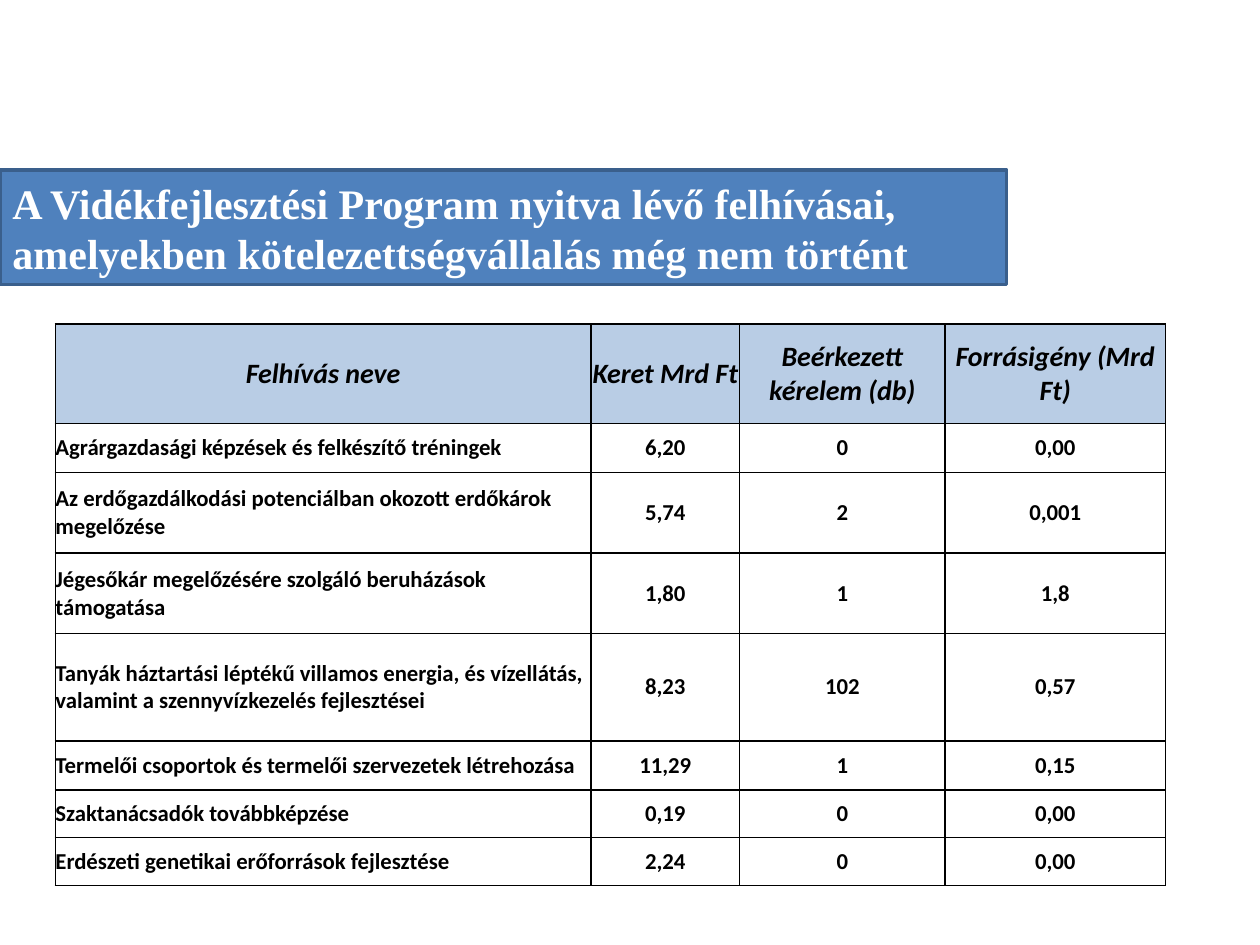
import pptx
import pptx.dml.color
import pptx.enum.shapes
import pptx.enum.text
import pptx.oxml
import pptx.oxml.ns
import pptx.util

Inches = pptx.util.Inches
Pt = pptx.util.Pt
ALIGN = pptx.enum.text.PP_ALIGN
MIDDLE = pptx.enum.text.MSO_ANCHOR.MIDDLE

COLORS = {
    "banner": "4F81BD",
    "banner_line": "3A5F8C",
    "header": "B9CDE5",
    "white": "FFFFFF",
    "black": "000000",
}
COLUMN_WIDTHS = [4.25, 1.18, 1.63, 1.75]
ROW_HEIGHTS = [0.79, 0.39, 0.64, 0.64, 0.85, 0.39, 0.38, 0.38]
CALLS = [
    ["Felhívás neve", "Keret Mrd Ft", "Beérkezett kérelem (db)", "Forrásigény (Mrd Ft)"],
    ["Agrárgazdasági képzések és felkészítő tréningek", "6,20", "0", "0,00"],
    ["Az erdőgazdálkodási potenciálban okozott erdőkárok megelőzése", "5,74", "2", "0,001"],
    ["Jégesőkár megelőzésére szolgáló beruházások támogatása", "1,80", "1", "1,8"],
    ["Tanyák háztartási léptékű villamos energia, és vízellátás, "
     "valamint a szennyvízkezelés fejlesztései", "8,23", "102", "0,57"],
    ["Termelői csoportok és termelői szervezetek létrehozása", "11,29", "1", "0,15"],
    ["Szaktanácsadók továbbképzése", "0,19", "0", "0,00"],
    ["Erdészeti genetikai erőforrások fejlesztése", "2,24", "0", "0,00"],
]


def rgb(name):
    return pptx.dml.color.RGBColor.from_string(COLORS[name])


def add_borders(cell):
    """Draw a 1 pt black line on all four sides of the cell."""
    properties = cell._tc.get_or_add_tcPr()
    for position, side in enumerate(["lnL", "lnR", "lnT", "lnB"]):
        line = pptx.oxml.parse_xml(
            f'<a:{side} {pptx.oxml.ns.nsdecls("a")} w="{Pt(1)}"><a:solidFill>'
            f'<a:srgbClr val="{COLORS["black"]}"/></a:solidFill></a:{side}>')
        properties.insert(position, line)


deck = pptx.Presentation()
deck.slide_width = Inches(10)
deck.slide_height = Inches(7.5)
page = deck.slides.add_slide(deck.slide_layouts[6])

# Table of open calls
table = page.shapes.add_table(
    len(ROW_HEIGHTS), len(COLUMN_WIDTHS), Inches(0.44), Inches(2.57),
    Inches(sum(COLUMN_WIDTHS)), Inches(sum(ROW_HEIGHTS))).table
table.horz_banding = False
for column, width in zip(table.columns, COLUMN_WIDTHS):
    column.width = Inches(width)
for row, height in zip(table.rows, ROW_HEIGHTS):
    row.height = Inches(height)

for row_index, call in enumerate(CALLS):
    is_header = row_index == 0
    for column_index, text in enumerate(call):
        cell = table.cell(row_index, column_index)
        cell.text = text
        cell.vertical_anchor = MIDDLE
        cell.margin_left = cell.margin_right = cell.margin_top = cell.margin_bottom = 0
        cell.fill.solid()
        cell.fill.fore_color.rgb = rgb("header" if is_header else "white")
        add_borders(cell)
        para = cell.text_frame.paragraphs[0]
        para.alignment = ALIGN.CENTER if is_header or column_index else ALIGN.LEFT
        para.font.name = "Calibri"
        para.font.size = Pt(16 if is_header else 13)
        para.font.bold = True
        para.font.italic = is_header
        para.font.color.rgb = rgb("black")

# Title banner
banner = page.shapes.add_shape(
    pptx.enum.shapes.MSO_SHAPE.RECTANGLE, Inches(0), Inches(1.35), Inches(7.99), Inches(0.91))
banner.shadow.inherit = False
banner.fill.solid()
banner.fill.fore_color.rgb = rgb("banner")
banner.line.color.rgb = rgb("banner_line")
banner.line.width = Pt(2)
banner.text_frame.word_wrap = True
banner.text_frame.vertical_anchor = MIDDLE
para = banner.text_frame.paragraphs[0]
para.text = ("A Vidékfejlesztési Program nyitva lévő felhívásai, "
             "amelyekben kötelezettségvállalás még nem történt")
para.alignment = ALIGN.LEFT
para.font.name = "Times New Roman"
para.font.size = Pt(24)
para.font.bold = True
para.font.color.rgb = rgb("white")

deck.save("out.pptx")
